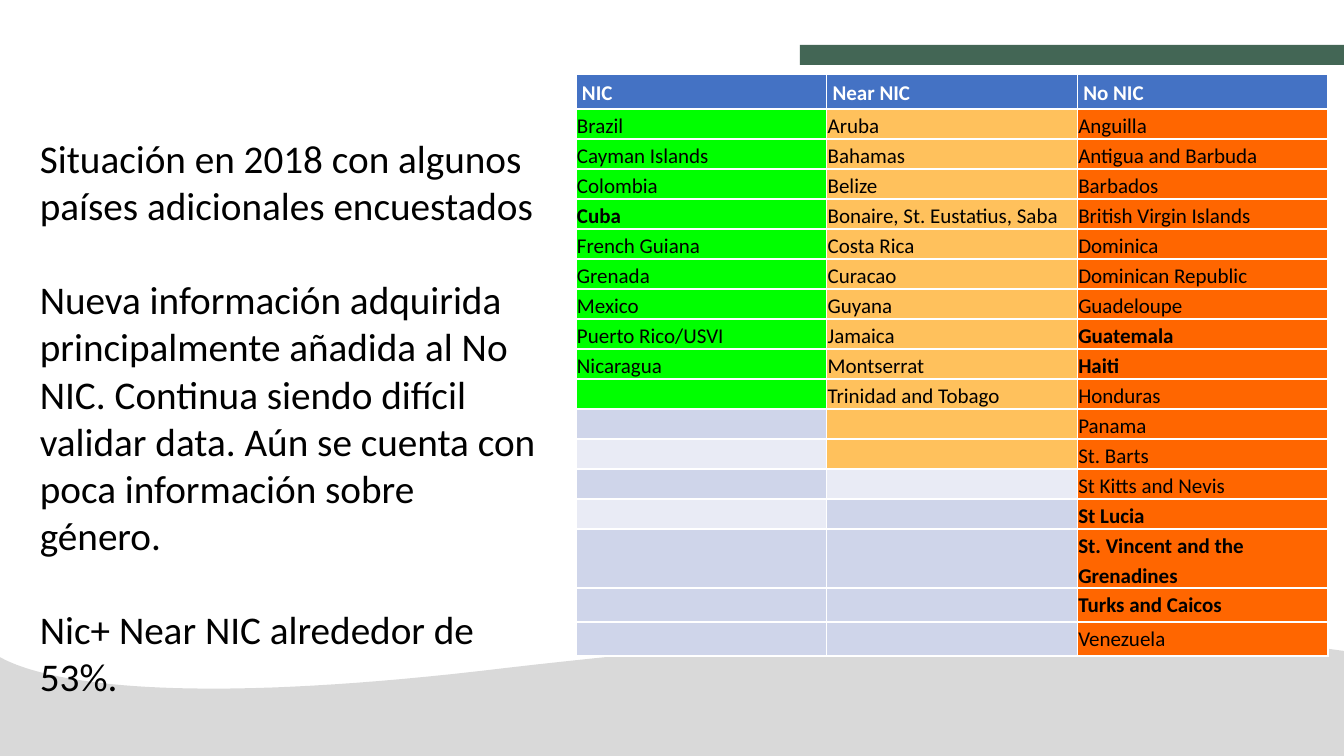
from pptx import Presentation
from pptx.dml.color import RGBColor
from pptx.enum.shapes import MSO_SHAPE
from pptx.util import Pt

SCALE = 914400 / 100.8
SLIDE_W, SLIDE_H = 1344, 756
FONT = "Calibri"

BLACK = RGBColor(0x00, 0x00, 0x00)
WHITE = RGBColor(0xFF, 0xFF, 0xFF)
WAVE_GRAY = RGBColor(0xD9, 0xD9, 0xD9)
BAR_GREEN = RGBColor(0x43, 0x66, 0x55)
HEADER_BLUE = RGBColor(0x44, 0x72, 0xC4)
BAND_DARK = RGBColor(0xCF, 0xD5, 0xEA)
BAND_LIGHT = RGBColor(0xE9, 0xEB, 0xF5)
NIC_GREEN = RGBColor(0x00, 0xFF, 0x00)
NEAR_ORANGE = RGBColor(0xFF, 0xC1, 0x5C)
NO_NIC_RED = RGBColor(0xFF, 0x66, 0x00)

COMMENTS = [
    "Situación en 2018 con algunos países adicionales encuestados",
    "Nueva información adquirida principalmente añadida al No NIC. "
    "Continua siendo difícil validar data. Aún se cuenta con poca "
    "información sobre género.",
    "Nic+ Near NIC alrededor de 53%.",
]

# Each column: heading, fill, number of filled rows, countries
COLUMNS = [
    ("NIC", NIC_GREEN, 10, [
        "Brazil", "Cayman Islands", "Colombia", "Cuba", "French Guiana",
        "Grenada", "Mexico", "Puerto Rico/USVI", "Nicaragua"]),
    ("Near NIC", NEAR_ORANGE, 12, [
        "Aruba", "Bahamas", "Belize", "Bonaire, St. Eustatius, Saba",
        "Costa Rica", "Curacao", "Guyana", "Jamaica", "Montserrat",
        "Trinidad and Tobago"]),
    ("No NIC", NO_NIC_RED, 17, [
        "Anguilla", "Antigua and Barbuda", "Barbados",
        "British Virgin Islands", "Dominica", "Dominican Republic",
        "Guadeloupe", "Guatemala", "Haiti", "Honduras", "Panama",
        "St. Barts", "St Kitts and Nevis", "St Lucia",
        "St. Vincent and the Grenadines", "Turks and Caicos", "Venezuela"]),
]
BOLD_COUNTRIES = {"Cuba", "Guatemala", "Haiti", "St Lucia",
                  "St. Vincent and the Grenadines", "Turks and Caicos"}
ROW_HEIGHTS = [35] + [30] * 14 + [59, 34, 34]


def px(n):
    return round(n * SCALE)


def add_run(p, text, size, color, bold=False):
    r = p.add_run()
    r.text = text
    r.font.name = FONT
    r.font.size = Pt(size)
    r.font.bold = bold
    r.font.color.rgb = color


def paint(sp, color):
    sp.shadow.inherit = False
    sp.fill.solid()
    sp.fill.fore_color.rgb = color
    sp.line.fill.background()


def curve(a, b, c, d, steps=40):
    for i in range(1, steps + 1):
        t = i / steps
        u = 1 - t
        yield tuple(u**3 * e + 3 * u * u * t * f + 3 * u * t * t * g + t**3 * h
                    for e, f, g, h in zip(a, b, c, d))


def add_wave(slide, x, y, w, h):
    right, crest, left = (w, 30), (508, 47), (0, 35)
    points = [right,
              *curve(right, (1176, 6), (911, 0), crest),
              *curve(crest, (136, 92), (28, 52), left),
              (0, h)]
    fb = slide.shapes.build_freeform(px(w), px(h))
    fb = slide.shapes.build_freeform(px(w), px(h), scale=1.0)
    fb.add_line_segments([(px(a), px(b)) for a, b in points])
    paint(fb.convert_to_shape(px(x), px(y)), WAVE_GRAY)


def add_bar(slide, x, y, w, h):
    paint(slide.shapes.add_shape(MSO_SHAPE.RECTANGLE, px(x), px(y), px(w), px(h)),
          BAR_GREEN)


def add_comments(slide, x, y, w, h):
    tf = slide.shapes.add_textbox(px(x), px(y), px(w), px(h)).text_frame
    tf.word_wrap = True
    for i, text in enumerate(COMMENTS):
        p = tf.add_paragraph() if i else tf.paragraphs[0]
        if i:
            p.space_before = Pt(34)
        add_run(p, text, 28, BLACK)


def fill_cell(cell, text, fill, color, bold, margins):
    cell.fill.solid()
    cell.fill.fore_color.rgb = fill
    side, top, bottom = (px(m) for m in margins)
    cell.margin_left = cell.margin_right = side
    cell.margin_top, cell.margin_bottom = top, bottom
    p = cell.text_frame.paragraphs[0]
    p.line_spacing = 1.15
    if text:
        add_run(p, text, 15, color, bold)
    else:
        p._p.get_or_add_endParaRPr().set("sz", "1500")


def add_country_table(slide, x, y, w, h):
    table = slide.shapes.add_table(len(ROW_HEIGHTS), len(COLUMNS),
                                   px(x), px(y), px(w), px(h)).table
    for row, height in zip(table.rows, ROW_HEIGHTS):
        row.height = px(height)
    for c, (heading, color, filled, countries) in enumerate(COLUMNS):
        table.columns[c].width = px(w / len(COLUMNS))
        fill_cell(table.cell(0, c), heading, HEADER_BLUE, WHITE, True, (6, 3, 3))
        for r in range(1, len(ROW_HEIGHTS)):
            text = countries[r - 1] if r <= len(countries) else ""
            light = r < 15 and (r + c) % 2 == 0
            band = BAND_LIGHT if light else BAND_DARK
            fill_cell(table.cell(r, c), text, color if r <= filled else band,
                      BLACK, text in BOLD_COUNTRIES, (1, 1, 0))


def main():
    prs = Presentation()
    prs.slide_width, prs.slide_height = px(SLIDE_W), px(SLIDE_H)
    slide = prs.slides.add_slide(prs.slide_layouts[6])
    add_wave(slide, -2, 621, 1346, 135)
    add_bar(slide, 800, 45, 544, 20)
    add_comments(slide, 30, 129, 524, 628)
    add_country_table(slide, 576, 74, 752, 582)
    prs.save("out.pptx")


if __name__ == "__main__":
    main()
